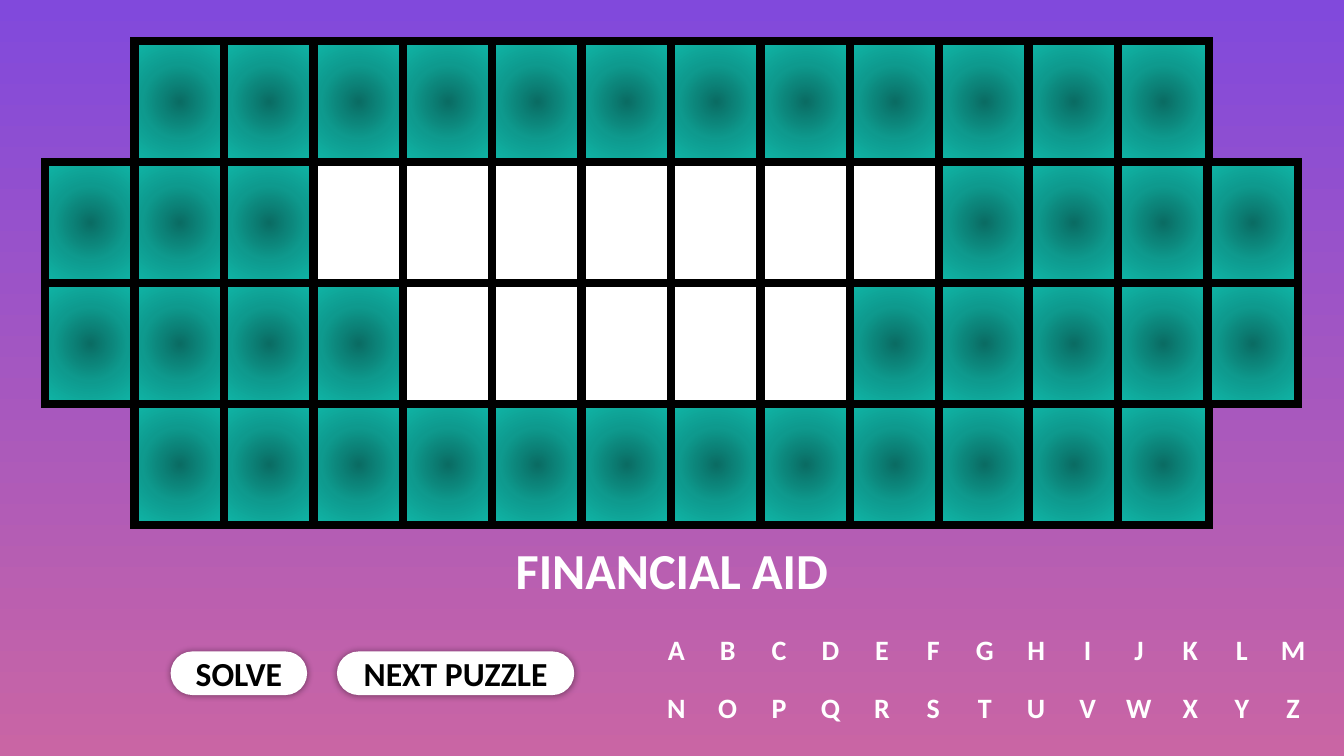
from pptx import Presentation, util as u
from pptx.dml import color
from pptx.enum import shapes, text
from pptx.oxml import ns, parse_xml

COLORS = {
    "sky": "8149DC", "dusk": "C965A4", "white": "FFFFFF", "black": "000000",
    "tile_core": "0A6C63", "tile_mid": "0E9A8E", "tile_edge": "10B7A8",
}
FONT = "Calibri"

# "." is no tile, "t" a teal tile, "w" a white letter tile
BOARD = [
    ".tttttttttttt.",
    "tttwwwwwwwtttt",
    "ttttwwwwwttttt",
    ".tttttttttttt.",
]
BOARD_LEFT, BOARD_TOP = 32.2, 29.5
TILE_W, TILE_H = 64.8, 86.4
COLUMN_STEP = 63.87

ALPHABET = ["ABCDEFGHIJKLM", "NOPQRSTUVWXYZ"]
LETTERS_LEFT, LETTERS_TOP = 468.7, 441.4
LETTER_STEP, LETTER_ROW_STEP = 36.72, 41.8


def rgb(name):
    return color.RGBColor.from_string(COLORS[name])


class PuzzleSlide:
    """Holds the style and the current slide."""

    def __init__(self, prs):
        self.s = prs.slides.add_slide(prs.slide_layouts[5])

    def background(self):
        fill = self.s.background.fill
        fill.gradient()
        fill.gradient_angle = 270
        for stop, name in zip(fill.gradient_stops, ("sky", "dusk")):
            stop.color.rgb = rgb(name)

    def set_text(self, sp, words, size, name):
        tf = sp.text_frame
        tf.text = words
        tf.word_wrap = False
        tf.auto_size = text.MSO_AUTO_SIZE.NONE
        tf.vertical_anchor = text.MSO_ANCHOR.MIDDLE
        tf.margin_left = tf.margin_right = tf.margin_top = tf.margin_bottom = 0
        p = tf.paragraphs[0]
        p.alignment = text.PP_ALIGN.CENTER
        font = p.runs[0].font
        font.name, font.size, font.bold = FONT, u.Pt(size), True
        font.color.rgb = rgb(name)

    def title(self, words):
        sp = self.s.shapes.title
        sp.left, sp.top = u.Pt(0), u.Pt(384.5)
        sp.width, sp.height = u.Pt(960), u.Pt(44.6)
        self.set_text(sp, words, 36, "white")

    def box(self, kind, x, y, w, h, line, line_width):
        sp = self.s.shapes.add_shape(kind, u.Pt(x), u.Pt(y), u.Pt(w), u.Pt(h))
        sp.shadow.inherit = False
        sp.fill.solid()
        sp.fill.fore_color.rgb = rgb("white")
        sp.line.color.rgb = rgb(line)
        sp.line.width = u.Pt(line_width)
        return sp

    def tile(self, x, y, teal):
        sp = self.box(shapes.MSO_SHAPE.RECTANGLE, x, y, TILE_W, TILE_H, "black", 6)
        outline = sp._element.spPr.find(ns.qn("a:ln"))
        outline.append(parse_xml(f'<a:miter {ns.nsdecls("a")} lim="800000"/>'))
        if teal:
            self.radial_fill(sp)

    def radial_fill(self, sp):
        """Swap the solid fill for a circular gradient, dark in the centre."""
        stops = "".join(
            f'<a:gs pos="{pos}"><a:srgbClr val="{COLORS[name]}"/></a:gs>'
            for pos, name in ((0, "tile_core"), (50000, "tile_mid"), (100000, "tile_edge")))
        gradient = parse_xml(
            f'<a:gradFill {ns.nsdecls("a")} rotWithShape="1"><a:gsLst>{stops}</a:gsLst>'
            '<a:path path="circle"><a:fillToRect l="50000" t="50000" r="50000" b="50000"/>'
            '</a:path></a:gradFill>')
        spPr = sp._element.spPr
        spPr.replace(spPr.find(ns.qn("a:solidFill")), gradient)

    def button(self, x, w, words):
        sp = self.box(shapes.MSO_SHAPE.ROUNDED_RECTANGLE, x, 465.8, w, 30.2, "white", 1)
        sp.adjustments[0] = 0.5
        sp._element.spPr.find(ns.qn("a:effectLst")).append(parse_xml(
            f'<a:outerShdw {ns.nsdecls("a")} blurRad="{u.Pt(5)}" dist="0" dir="0" '
            f'rotWithShape="0"><a:srgbClr val="{COLORS["black"]}">'
            '<a:alpha val="40000"/></a:srgbClr></a:outerShdw>'))
        self.set_text(sp, words, 24, "black")

    def letter(self, x, y, char):
        sp = self.s.shapes.add_textbox(u.Pt(x), u.Pt(y), u.Pt(28.8), u.Pt(44.6))
        self.set_text(sp, char, 20, "white")


def main():
    prs = Presentation()
    prs.slide_width, prs.slide_height = u.Pt(960), u.Pt(540)
    puzzle = PuzzleSlide(prs)
    puzzle.background()
    for row, tiles in enumerate(BOARD):
        for column, kind in enumerate(tiles):
            if kind != ".":
                puzzle.tile(BOARD_LEFT + column * COLUMN_STEP,
                            BOARD_TOP + row * TILE_H, kind == "t")
    puzzle.title("FINANCIAL AID")
    puzzle.button(122.4, 96.5, "SOLVE")
    puzzle.button(241.2, 168.5, "NEXT PUZZLE")
    for row, letters in enumerate(ALPHABET):
        for column, char in enumerate(letters):
            puzzle.letter(LETTERS_LEFT + column * LETTER_STEP,
                          LETTERS_TOP + row * LETTER_ROW_STEP, char)
    prs.save("out.pptx")


if __name__ == "__main__":
    main()
